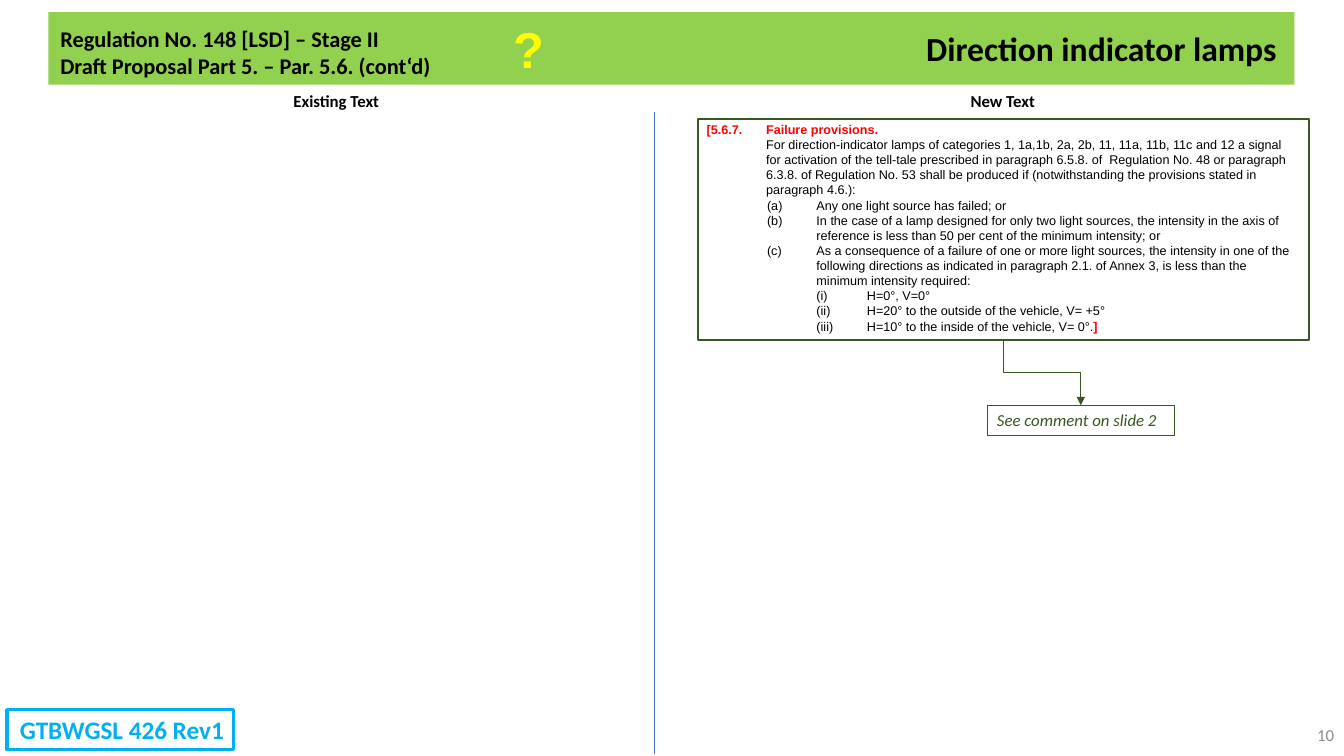
import pptx
import pptx.util
import pptx.dml.color
import pptx.enum.shapes
import pptx.enum.text
import pptx.oxml
import pptx.oxml.ns

PX = 9144  # EMU per px, 100 px to the inch
COLORS = {"band": "92D050", "black": "000000", "red": "FF0000", "rule": "4472C4",
          "green": "385723", "gray": "8C8C8C", "yellow": "FFFF00", "cyan": "00B0F0"}
ALIGN = pptx.enum.text.PP_ALIGN
ANCHOR = pptx.enum.text.MSO_ANCHOR
LINK = pptx.enum.shapes.MSO_CONNECTOR
NS = pptx.oxml.ns.nsdecls("a")

# level, text
CLAUSES = [
    (0, "\tFor direction-indicator lamps of categories 1, 1a,1b, 2a, 2b, 11, 11a, 11b, 11c "
        "and 12 a signal for activation of the tell-tale prescribed in paragraph 6.5.8. of  "
        "Regulation No. 48 or paragraph 6.3.8. of Regulation No. 53 shall be produced if "
        "(notwithstanding the provisions stated in paragraph 4.6.):"),
    (1, "(a)\tAny one light source has failed; or"),
    (1, "(b)\tIn the case of a lamp designed for only two light sources, the intensity in the "
        "axis of reference is less than 50 per cent of the minimum intensity; or"),
    (1, "(c)\tAs a consequence of a failure of one or more light sources, the intensity in one "
        "of the following directions as indicated in paragraph 2.1. of Annex 3, is less than "
        "the minimum intensity required:"),
    (2, "(i)\tH=0°, V=0°"),
    (2, "(ii)\tH=20° to the outside of the vehicle, V= +5°"),
    (2, "(iii)\tH=10° to the inside of the vehicle, V= 0°."),
]
INDENTS = [(59, -59), (109, -49), (159, -50)]  # left margin and first line by level


def px(n):
    return pptx.util.Emu(n * PX)


def rgb(name):
    return pptx.dml.color.RGBColor.from_string(COLORS[name])


def add_run(para, text, size=12, font="Calibri", color="black", bold=False, italic=False):
    run = para.add_run()
    run.text = text
    run.font.size = pptx.util.Pt(size)
    run.font.name = font
    run.font.bold = bold
    run.font.italic = italic
    run.font.color.rgb = rgb(color)
    return run


def write(shape, text, align=ALIGN.LEFT, anchor=ANCHOR.TOP, **style):
    """Fill a shape with one paragraph per line and return the runs."""
    frame = shape.text_frame
    frame.word_wrap = True
    frame.vertical_anchor = anchor
    runs = []
    for i, line in enumerate(text.split("\n")):
        para = frame.add_paragraph() if i else frame.paragraphs[0]
        para.alignment = align
        runs.append(add_run(para, line, **style))
    return runs


def label(slide, box, text, **style):
    return write(slide.shapes.add_textbox(*map(px, box)), text, **style)


def frame_box(slide, box, fill=None, line=None, width=1):
    shape = slide.shapes.add_shape(pptx.enum.shapes.MSO_SHAPE.RECTANGLE, *map(px, box))
    shape.shadow.inherit = False
    if fill:
        shape.fill.solid()
        shape.fill.fore_color.rgb = rgb(fill)
    else:
        shape.fill.background()
    if line:
        shape.line.color.rgb = rgb(line)
        shape.line.width = pptx.util.Pt(width)
    else:
        shape.line.fill.background()
    return shape


def connect(slide, kind, ends, color):
    link = slide.shapes.add_connector(kind, *map(px, ends))
    link.line.color.rgb = rgb(color)
    link.line.width = pptx.util.Pt(0.5)
    link._element.spPr.append(pptx.oxml.parse_xml(f"<a:effectLst {NS}/>"))
    return link


def header(slide, box):
    x, y, w, h = box
    frame_box(slide, box, fill="band")
    label(slide, (x + 2, y + 8, 500, 64),
          "Regulation No. 148 [LSD] – Stage II\nDraft Proposal Part 5. – Par. 5.6. (cont‘d)",
          size=16, bold=True)
    label(slide, (x + w - 640, y + 11, 632, 50), "Direction indicator lamps",
          align=ALIGN.RIGHT, size=24, bold=True)
    mark, = label(slide, (x + 451, y + 1, 48, 71), "?", align=ALIGN.CENTER,
                  size=36, font="Arial", color="yellow", bold=True)
    props = mark.font._element
    props.set("spc", "50")
    props.insert(0, pptx.oxml.parse_xml(
        f'<a:ln {NS} w="19050"><a:solidFill><a:srgbClr val="{COLORS["red"]}"/>'
        "</a:solidFill></a:ln>"))


def columns(slide, box):
    x, y, w, h = box
    for left, text in ((x, "Existing Text"), (x + w - 239, "New Text")):
        label(slide, (left, y, 239, 30), text, align=ALIGN.CENTER, bold=True)
    connect(slide, LINK.STRAIGHT, (649, y + 26, 649, y + h), "rule")


def clause(slide, box):
    """Framed regulation text."""
    x, y, w, h = box
    frame = slide.shapes.add_textbox(*map(px, (x - 1, y - 2, w + 1, h))).text_frame
    frame.word_wrap = True
    for i, (level, text) in enumerate([(0, "[5.6.7.\tFailure provisions.")] + CLAUSES):
        para = frame.add_paragraph() if i else frame.paragraphs[0]
        para.level = level
        para.line_spacing = pptx.util.Pt(10.8)
        margin, first = INDENTS[level]
        props = para._p.get_or_add_pPr()
        props.set("marL", str(px(margin)))
        props.set("indent", str(px(first)))
        add_run(para, text, size=9, font="Arial", color="black" if i else "red", bold=not i)
    add_run(para, "]", size=9, font="Arial", color="red", bold=True)
    frame_box(slide, box, line="green", width=1.5)


def comment(slide, box, start):
    """Note box with a bent arrow that drops to its top edge from start."""
    x, y, w, h = box
    write(frame_box(slide, box, line="green", width=0.75), "See comment on slide 2",
          color="green", italic=True)
    left, top = start
    wide, high = x + w // 2 - left, y - top
    # the elbow is laid on its side about its centre, then turned upright
    cx, cy = left + wide // 2, top + high // 2
    ax, ay = cx - high // 2, cy - wide // 2
    link = connect(slide, LINK.ELBOW, (ax + high, ay, ax, ay + wide), "green")
    link._element.spPr.xfrm.set("rot", "16200000")
    link.line._get_or_add_ln().append(
        pptx.oxml.parse_xml(f'<a:tailEnd {NS} type="triangle"/>'))


def footer(slide, box):
    x, y, w, h = box
    tag = frame_box(slide, (x, y, 225, h), line="cyan", width=2.25)
    write(tag, "GTBWGSL 426 Rev1", align=ALIGN.RIGHT, size=18, color="cyan", bold=True)
    label(slide, (x + w - 300, y + 5, 300, h), "10", align=ALIGN.RIGHT,
          anchor=ANCHOR.MIDDLE, color="gray")


def main():
    deck = pptx.Presentation()
    deck.slide_width, deck.slide_height = px(1333), px(750)
    slide = deck.slides.add_slide(deck.slide_layouts[6])
    header(slide, (48, 12, 1236, 72))
    columns(slide, (214, 85, 900, 663))
    clause(slide, (692, 118, 606, 219))
    comment(slide, (979, 402, 186, 30), (995, 337))
    footer(slide, (7, 704, 1326, 40))
    deck.save("out.pptx")


if __name__ == "__main__":
    main()
